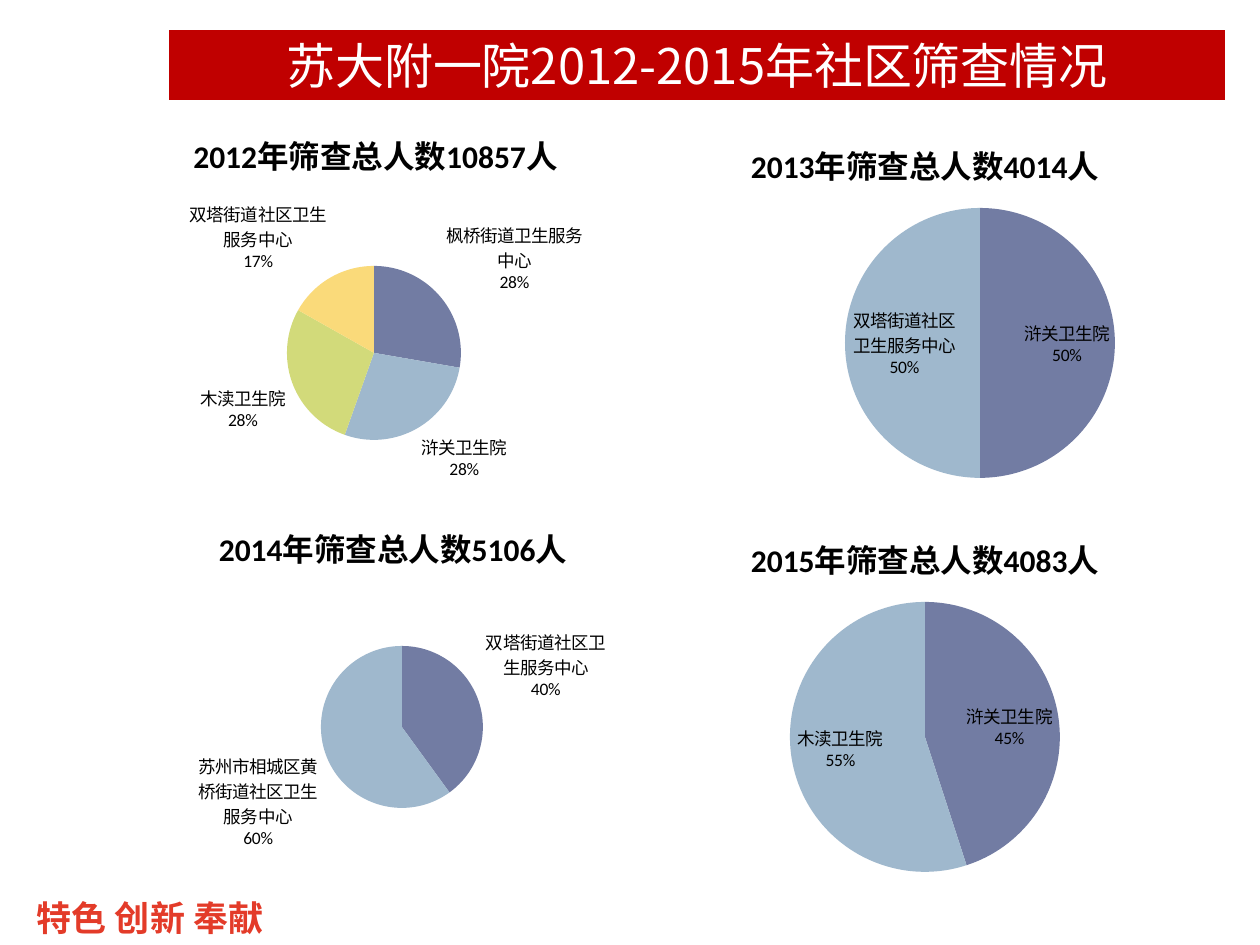
import pptx
import pptx.chart.data
import pptx.dml.color
import pptx.enum.chart
import pptx.enum.text
import pptx.oxml
import pptx.oxml.ns
import pptx.util
from dataclasses import dataclass

SCALE = 914400 / 126
POS = pptx.enum.chart.XL_LABEL_POSITION


@dataclass(frozen=True)
class Theme:
    bar: str = "C00000"
    white: str = "FFFFFF"
    black: str = "000000"
    motto: str = "E33B29"
    slices: tuple = ("727CA3", "9FB8CD", "D2DA7A", "FADA7A")
    latin: str = "Calibri"
    han: str = "Noto Sans CJK SC"
    head: int = 28
    foot: int = 20
    name: int = 18
    label: int = 10


THEME = Theme()


def px(n):
    return round(n * SCALE)


def rgb(tone):
    return pptx.dml.color.RGBColor.from_string(tone)


def style(font, face, size, tone, bold=False):
    font.name = face
    font.size = pptx.util.Pt(size)
    font.bold = bold
    font.color.rgb = rgb(tone)


def style_run(run, face, size, tone, bold=False):
    style(run.font, face, size, tone, bold)
    east = pptx.oxml.parse_xml(
        f'<a:ea {pptx.oxml.ns.nsdecls("a")} typeface="{THEME.han}"/>')
    run.font._element.append(east)


def add_head(slide, box, text):
    bar = slide.shapes.title
    bar.left, bar.top, bar.width, bar.height = map(px, box)
    bar.fill.solid()
    bar.fill.fore_color.rgb = rgb(THEME.bar)
    bar.line.color.rgb = rgb(THEME.white)
    bar.line.width = pptx.util.Pt(0.75)
    frame = bar.text_frame
    frame.text = text
    frame.vertical_anchor = pptx.enum.text.MSO_ANCHOR.MIDDLE
    line = frame.paragraphs[0]
    line.alignment = pptx.enum.text.PP_ALIGN.CENTER
    style_run(line.runs[0], THEME.han, THEME.head, THEME.white)


def add_foot(slide, box, text):
    frame = slide.shapes.add_textbox(*map(px, box)).text_frame
    frame.word_wrap = True
    frame.margin_left = px(37)
    frame.text = text
    style_run(frame.paragraphs[0].runs[0], THEME.han, THEME.foot, THEME.motto, True)


def set_plot(chart, box, mid, rad):
    left, top, wide, high = box
    spots = {"x": (mid[0] - rad - left) / wide, "y": (mid[1] - rad - top) / high,
             "w": 2 * rad / wide, "h": 2 * rad / high}
    sizes = "".join(f'<c:{key} val="{val:.4f}"/>' for key, val in spots.items())
    area = chart._chartSpace.chart.plotArea
    for old in area.findall(pptx.oxml.ns.qn("c:layout")):
        area.remove(old)
    area.insert(0, pptx.oxml.parse_xml(
        f'<c:layout {pptx.oxml.ns.nsdecls("c")}><c:manualLayout>'
        '<c:layoutTarget val="inner"/><c:xMode val="edge"/><c:yMode val="edge"/>'
        f'{sizes}</c:manualLayout></c:layout>'))


def add_pie(slide, box, mid, rad, title, shares):
    data = pptx.chart.data.CategoryChartData()
    data.categories = list(shares)
    data.add_series("Series 1", list(shares.values()))
    chart = slide.shapes.add_chart(
        pptx.enum.chart.XL_CHART_TYPE.PIE, *map(px, box), data).chart
    style(chart.font, THEME.latin, THEME.label, THEME.black)
    chart.has_legend = False
    chart.has_title = True
    frame = chart.chart_title.text_frame
    frame.text = title
    style_run(frame.paragraphs[0].runs[0], THEME.latin, THEME.name, THEME.black, True)
    set_plot(chart, box, mid, rad)

    plot = chart.plots[0]
    plot.vary_by_categories = True
    for i, tone in enumerate(THEME.slices[:len(shares)]):
        fill = plot.series[0].points[i].format.fill
        fill.solid()
        fill.fore_color.rgb = rgb(tone)
    labels = plot.series[0].data_labels
    labels.show_value = False
    labels.show_percentage = True
    labels.show_category_name = True
    labels.position = POS.BEST_FIT
    style(labels.font, THEME.latin, THEME.label, THEME.black)
    split = pptx.oxml.parse_xml(
        f'<c:separator {pptx.oxml.ns.nsdecls("c")}>\n</c:separator>')
    labels._element.find(pptx.oxml.ns.qn("c:showBubbleSize")).addnext(split)


def main():
    deck = pptx.Presentation()
    deck.slide_width, deck.slide_height = px(1260), px(945)
    slide = deck.slides.add_slide(deck.slide_layouts[5])
    twin, guan, mu = "双塔街道社区卫生服务中心", "浒关卫生院", "木渎卫生院"
    pies = [
        ((20, 108, 711, 392), (374, 353), 87, "2012年筛查总人数10857人",
         {"枫桥街道卫生服务中心": 28, guan: 28, mu: 28, twin: 17}),
        ((610, 118, 630, 378), (980, 343), 135, "2013年筛查总人数4014人",
         {guan: 50, twin: 50}),
        ((78, 501, 630, 378), (402, 727), 81, "2014年筛查总人数5106人",
         {twin: 40, "苏州市相城区黄桥街道社区卫生服务中心": 60}),
        ((610, 512, 630, 378), (925, 737), 135, "2015年筛查总人数4083人",
         {guan: 45, mu: 55}),
    ]
    add_foot(slide, (0, 890, 532, 55), "特色 创新 奉献")
    for pie in pies:
        add_pie(slide, *pie)
    add_head(slide, (168, 29, 1058, 72), "苏大附一院2012-2015年社区筛查情况")
    deck.save("out.pptx")


if __name__ == "__main__":
    main()
